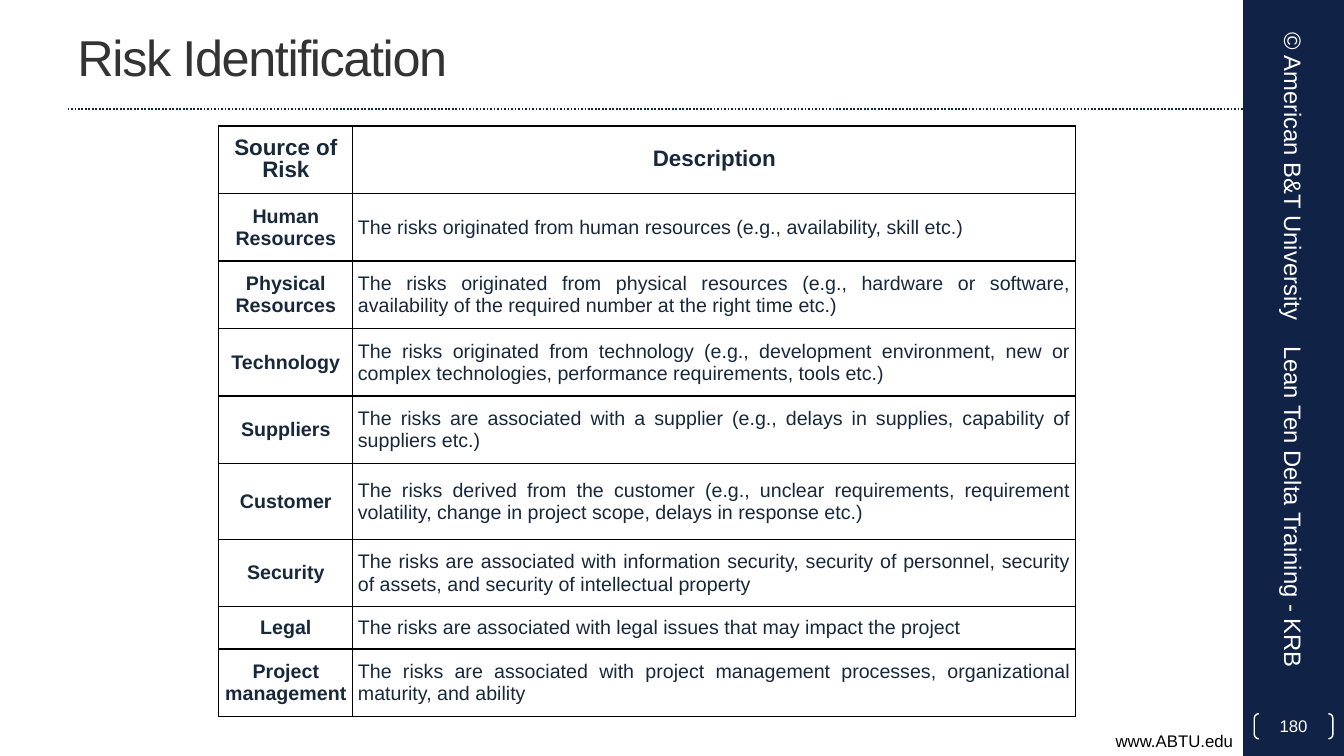
from lxml.etree import SubElement
from pptx import Presentation
from pptx.dml.color import RGBColor
from pptx.enum.dml import MSO_LINE
from pptx.enum.shapes import MSO_CONNECTOR, MSO_SHAPE
from pptx.enum.text import MSO_ANCHOR, PP_ALIGN
from pptx.oxml import parse_xml
from pptx.oxml.ns import nsdecls, qn
from pptx.util import Inches, Pt

NAVY, RULE, INK = "102245", "17273B", "18283B"
WHITE, BLACK, GREY = "FFFFFF", "000000", "333333"

COLUMN_WIDTHS = [1.33, 7.17]
ROW_HEIGHTS = [0.67] * 5 + [0.75, 0.67, 0.42, 0.67]
RISKS = [
    ("Source of Risk", "Description"),
    ("Human Resources",
     "The risks originated from human resources (e.g., availability, skill etc.)"),
    ("Physical Resources",
     "The risks originated from physical resources (e.g., hardware or software, "
     "availability of the required number at the right time etc.)"),
    ("Technology",
     "The risks originated from technology (e.g., development environment, new or "
     "complex technologies, performance requirements, tools etc.)"),
    ("Suppliers",
     "The risks are associated with a supplier (e.g., delays in supplies, "
     "capability of suppliers etc.)"),
    ("Customer",
     "The risks derived from the customer (e.g., unclear requirements, requirement "
     "volatility, change in project scope, delays in response etc.)"),
    ("Security",
     "The risks are associated with information security, security of personnel, "
     "security of assets, and security of intellectual property"),
    ("Legal",
     "The risks are associated with legal issues that may impact the project"),
    ("Project management",
     "The risks are associated with project management processes, organizational "
     "maturity, and ability"),
]


def color(hex_string):
    return RGBColor.from_string(hex_string)


def write(frame, text, size, ink, align=PP_ALIGN.LEFT, bold=False):
    frame.word_wrap = True
    para = frame.paragraphs[0]
    para.text = text
    para.alignment = align
    para.font.name = "Arial"
    para.font.size = Pt(size)
    para.font.bold = bold
    para.font.color.rgb = color(ink)
    return para


def add_text(page, box, text, size, ink, align=PP_ALIGN.LEFT,
             anchor=MSO_ANCHOR.MIDDLE):
    text_box = page.shapes.add_textbox(*map(Inches, box))
    text_box.text_frame.vertical_anchor = anchor
    write(text_box.text_frame, text, size, ink, align)
    return text_box


def add_heading(page, box, text):
    left, top, width, height = box
    # Title, tightened by one point per letter
    title = add_text(page, (left, top + 0.03, width - 0.55, height - 0.03),
                     text, 36, GREY)
    span = title.text_frame.paragraphs[0].runs[0]
    span.font._element.set("spc", "-100")
    # Dotted rule along the bottom of the box
    rule = page.shapes.add_connector(
        MSO_CONNECTOR.STRAIGHT, Inches(left), Inches(top + height),
        Inches(left + width), Inches(top + height))
    rule.line.color.rgb = color(RULE)
    rule.line.width = Pt(1.25)
    rule.line.dash_style = MSO_LINE.ROUND_DOT
    SubElement(rule._element.spPr, qn("a:effectLst"))


def add_rail(page, box, number):
    left, top, width, height = box
    # Navy band
    band = page.shapes.add_shape(MSO_SHAPE.RECTANGLE, *map(Inches, box))
    band.shadow.inherit = False
    band.fill.solid()
    band.fill.fore_color.rgb = color(NAVY)
    band.line.fill.background()
    # Turned labels: text, middle, length, alignment
    labels = [
        ("© American B&T University", 1.75, 3.17, PP_ALIGN.CENTER),
        ("Lean Ten Delta Training - KRB", 5.17, 3.67, PP_ALIGN.LEFT),
    ]
    thickness = 0.53
    for text, middle, length, align in labels:
        label = add_text(
            page, (left + width / 2 - length / 2, top + middle - thickness / 2,
                   length, thickness), text, 17, WHITE, align)
        label.rotation = 90
    # Bracketed page number
    bracket = page.shapes.add_shape(
        MSO_SHAPE.DOUBLE_BRACKET, Inches(left + 0.11),
        Inches(top + height - 0.42), Inches(width - 0.22), Inches(0.25))
    bracket.adjustments[0] = 0.18
    bracket.shadow.inherit = False
    bracket.fill.background()
    bracket.line.color.rgb = color(WHITE)
    bracket.line.width = Pt(1)
    frame = bracket.text_frame
    frame.margin_left = frame.margin_right = 0
    frame.margin_top = frame.margin_bottom = 0
    frame.vertical_anchor = MSO_ANCHOR.MIDDLE
    write(frame, number, 12, WHITE, PP_ALIGN.CENTER)


def add_borders(cell):
    properties = cell._tc.get_or_add_tcPr()
    for index, side in enumerate(("lnL", "lnR", "lnT", "lnB")):
        properties.insert(index, parse_xml(
            f'<a:{side} {nsdecls("a")} w="12700"><a:solidFill>'
            f'<a:srgbClr val="{BLACK}"/></a:solidFill></a:{side}>'))


def add_risk_table(page, box):
    table = page.shapes.add_table(
        len(RISKS), len(COLUMN_WIDTHS), *map(Inches, box)).table
    table.first_row = table.horz_banding = False
    for column, width in zip(table.columns, COLUMN_WIDTHS):
        column.width = Inches(width)
    for row_index, (row, height) in enumerate(zip(table.rows, ROW_HEIGHTS)):
        row.height = Inches(height)
        for column_index, cell in enumerate(row.cells):
            heading = row_index == 0 or column_index == 0
            cell.margin_left = cell.margin_right = Inches(0.05)
            cell.margin_top = cell.margin_bottom = 0
            cell.vertical_anchor = MSO_ANCHOR.MIDDLE
            cell.fill.background()
            add_borders(cell)
            para = write(cell.text_frame, RISKS[row_index][column_index],
                         16 if row_index == 0 else 14, INK,
                         PP_ALIGN.CENTER if heading else PP_ALIGN.JUSTIFY, heading)
            para.line_spacing = Pt(16)


def main():
    deck = Presentation()
    deck.slide_width, deck.slide_height = Inches(13.33), Inches(7.5)
    page = deck.slides.add_slide(deck.slide_layouts[6])
    add_rail(page, (12.33, 0, 1, 7.5), "180")
    add_heading(page, (0.67, 0, 11.66, 1.08), "Risk Identification")
    add_text(page, (0, 7.2, 12.33, 0.3), "www.ABTU.edu", 12, BLACK,
             PP_ALIGN.RIGHT, MSO_ANCHOR.TOP)
    add_risk_table(page, (2.17, 1.25, sum(COLUMN_WIDTHS), sum(ROW_HEIGHTS)))
    deck.save("out.pptx")


if __name__ == "__main__":
    main()
